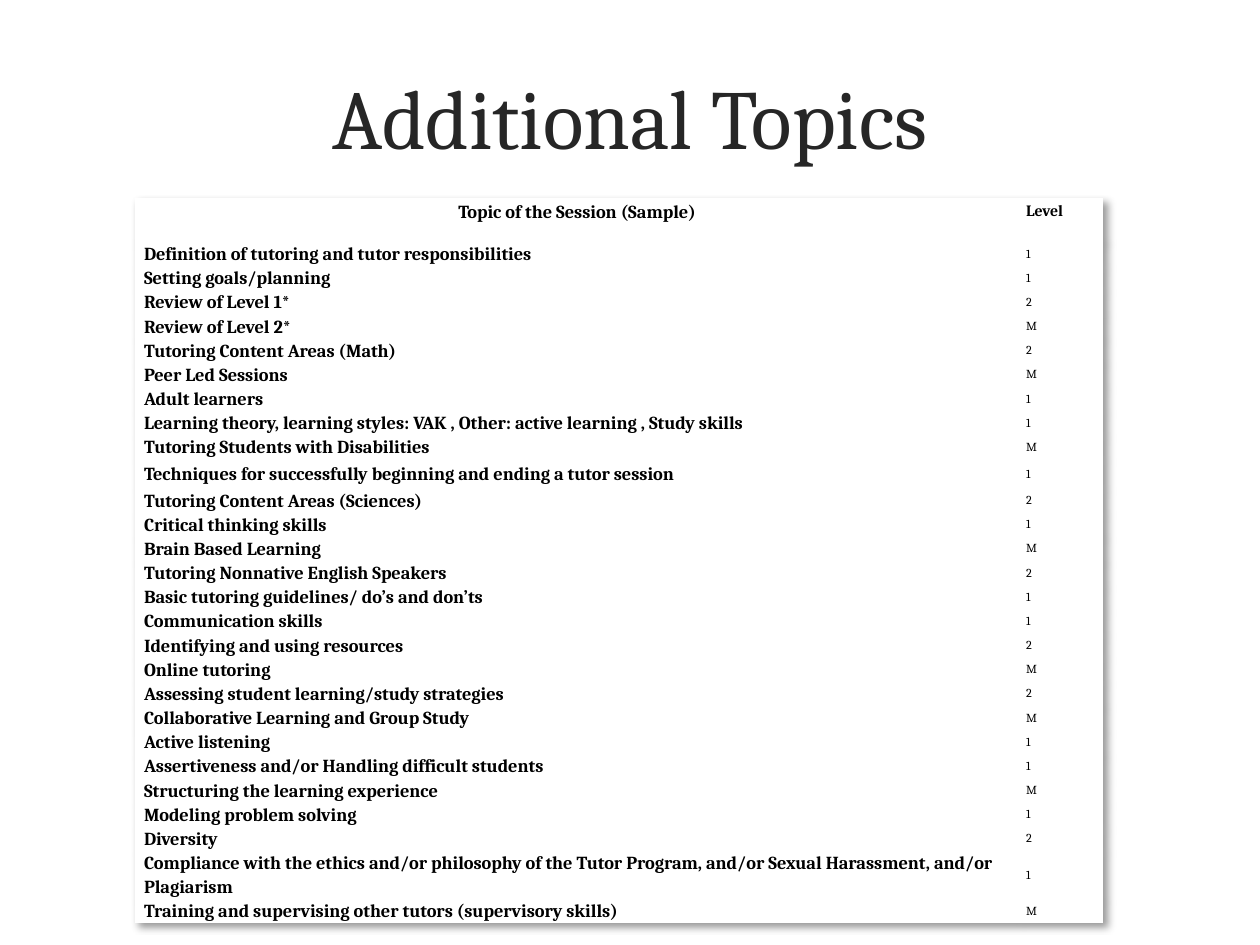
from lxml.etree import SubElement
from pptx import Presentation
from pptx.dml.color import RGBColor
from pptx.enum.text import MSO_ANCHOR as Anchor, PP_ALIGN as Align
from pptx.oxml import parse_xml
from pptx.oxml.ns import nsdecls, qn
from pptx.util import Pt

TITLE = "Additional Topics"
HEADER = ("Topic of the Session (Sample)", "Level")
TOPICS = [
    ("Definition of tutoring and tutor responsibilities", "1"),
    ("Setting goals/planning", "1"),
    ("Review of Level 1*", "2"),
    ("Review of Level 2*", "M"),
    ("Tutoring Content Areas (Math)", "2"),
    ("Peer Led Sessions", "M"),
    ("Adult learners", "1"),
    ("Learning theory, learning styles: VAK , Other: active learning , Study skills", "1"),
    ("Tutoring Students with Disabilities", "M"),
    ("Techniques for successfully beginning and ending a tutor session", "1"),
    ("Tutoring Content Areas (Sciences)", "2"),
    ("Critical thinking skills", "1"),
    ("Brain Based Learning", "M"),
    ("Tutoring Nonnative English Speakers", "2"),
    ("Basic tutoring guidelines/ do’s and don’ts", "1"),
    ("Communication skills", "1"),
    ("Identifying and using resources", "2"),
    ("Online tutoring", "M"),
    ("Assessing student learning/study strategies", "2"),
    ("Collaborative Learning and Group Study", "M"),
    ("Active listening", "1"),
    ("Assertiveness and/or Handling difficult students", "1"),
    ("Structuring the learning experience", "M"),
    ("Modeling problem solving", "1"),
    ("Diversity", "2"),
    ("Compliance with the ethics and/or philosophy of the Tutor Program, "
     "and/or Sexual Harassment, and/or Plagiarism", "1"),
    ("Training and supervising other tutors (supervisory skills)", "M"),
]
FONT = "Cambria"
WHITE = RGBColor(0xFF, 0xFF, 0xFF)
BLACK = RGBColor(0, 0, 0)
CHARCOAL = RGBColor(0x26, 0x26, 0x26)
COLUMN_WIDTHS = (504, 48.2)
ROW_HEIGHT = 13.8
SPECIAL_HEIGHTS = {0: 24, 10: 16.6, 26: 2 * ROW_HEIGHT}
SHADOW = (
    f'<a:effectLst {nsdecls("a")}><a:outerShdw blurRad="50800" dist="38100" '
    'dir="2700000" algn="tl" rotWithShape="0"><a:srgbClr val="000000">'
    '<a:alpha val="40000"/></a:srgbClr></a:outerShdw></a:effectLst>'
)


def add_borders(cell, bottom):
    props = cell._tc.get_or_add_tcPr()
    for side, width in (("L", 1), ("R", 1), ("T", 1), ("B", bottom)):
        line = SubElement(props, qn(f"a:ln{side}"), w=str(Pt(width)))
        fill = SubElement(line, qn("a:solidFill"))
        SubElement(fill, qn("a:srgbClr"), val=str(WHITE))


def fill_cell(cell, text, size, bold, is_header):
    cell.text = text
    cell.margin_left = cell.margin_right = Pt(4.5)
    cell.margin_top = cell.margin_bottom = 0
    cell.vertical_anchor = Anchor.TOP if is_header else Anchor.MIDDLE
    add_borders(cell, 3 if is_header else 1)
    cell.fill.solid()
    cell.fill.fore_color.rgb = WHITE
    paragraph = cell.text_frame.paragraphs[0]
    paragraph.line_spacing = 1.15
    font = paragraph.font
    font.name, font.size, font.bold = FONT, Pt(size), bold
    font.color.rgb = BLACK
    return paragraph


deck = Presentation()
deck.slide_width, deck.slide_height = Pt(720), Pt(540)
slide = deck.slides.add_slide(deck.slide_layouts[5])

title = slide.shapes.title
title.left, title.top, title.width, title.height = Pt(43.5), Pt(18), Pt(633), Pt(96)
title.text = TITLE
title.text_frame.vertical_anchor = Anchor.MIDDLE
heading = title.text_frame.paragraphs[0]
heading.alignment = Align.CENTER
heading.font.name, heading.font.size = FONT, Pt(48)
heading.font.color.rgb = CHARCOAL

rows = [HEADER] + TOPICS
heights = [SPECIAL_HEIGHTS.get(i, ROW_HEIGHT) for i in range(len(rows))]
table = slide.shapes.add_table(
    len(rows), len(HEADER), Pt(77.8), Pt(113.8), Pt(sum(COLUMN_WIDTHS)), Pt(sum(heights))
).table
table._tbl.tblPr.insert(0, parse_xml(SHADOW))
for column, width in zip(table.columns, COLUMN_WIDTHS):
    column.width = Pt(width)
for i, (topic, level) in enumerate(rows):
    is_header = i == 0
    table.rows[i].height = Pt(heights[i])
    topic_line = fill_cell(table.cell(i, 0), topic, 10.5, True, is_header)
    topic_line.alignment = Align.CENTER if is_header else Align.LEFT
    fill_cell(table.cell(i, 1), level, 9 if is_header else 7, is_header, is_header)

deck.save("out.pptx")
